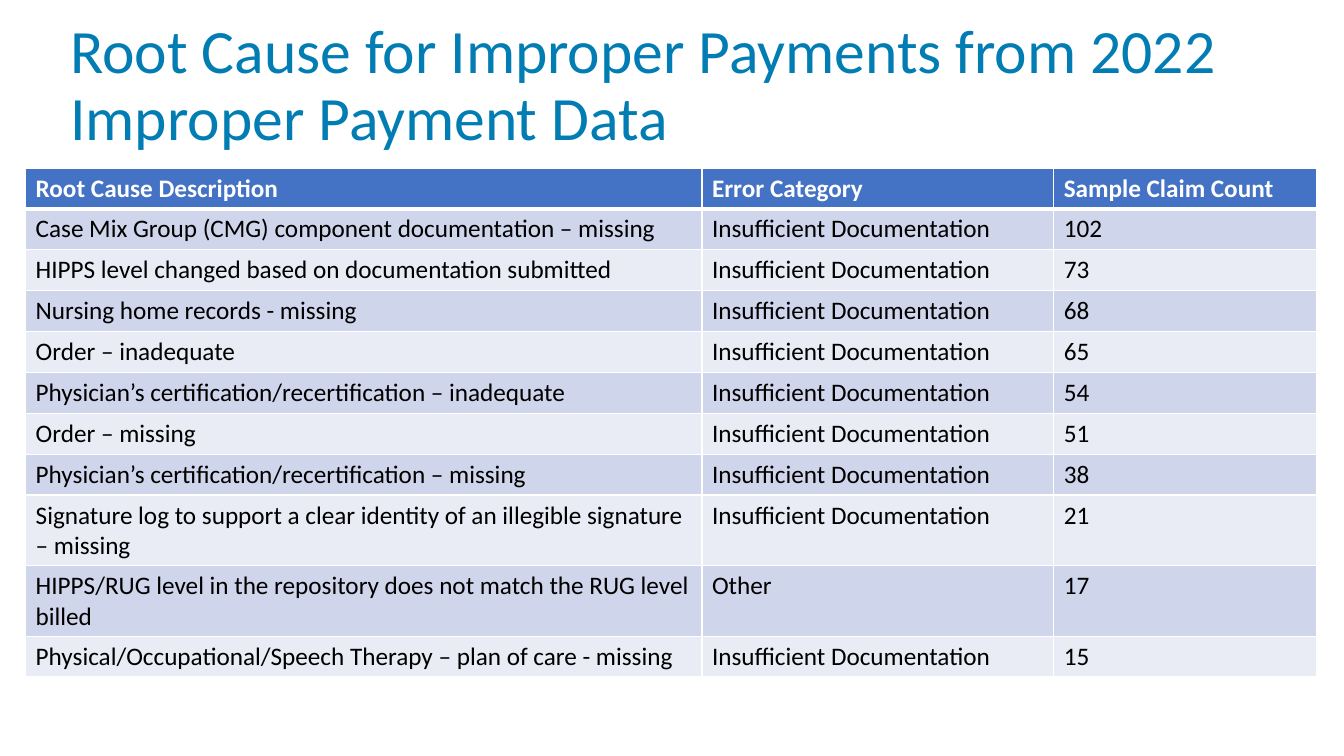
from dataclasses import dataclass

from lxml.etree import SubElement
from pptx import Presentation
from pptx.dml.color import RGBColor
from pptx.enum.text import MSO_ANCHOR
from pptx.oxml.ns import qn
from pptx.slide import Slide
from pptx.table import _Cell
from pptx.text.text import _Paragraph
from pptx.util import Pt


@dataclass(frozen=True)
class Theme:
    font: str = "Calibri"
    title_size: float = 44
    table_size: float = 18
    title: str = "017DB4"
    header_fill: str = "4472C4"
    header_text: str = "FFFFFF"
    body_text: str = "000000"
    bands: tuple[str, str] = ("CFD5EA", "E9EBF5")
    border: str = "FFFFFF"
    border_width: float = 1
    header_rule_width: float = 3


@dataclass(frozen=True)
class RootCause:
    description: str
    claims: int
    category: str = "Insufficient Documentation"


THEME = Theme()
TITLE = "Root Cause for Improper Payments from 2022 Improper Payment Data"
HEADINGS = ("Root Cause Description", "Error Category", "Sample Claim Count")
COLUMN_WIDTHS = (483.1, 251.3, 187.9)
ROW_HEIGHT = 29.2
ROOT_CAUSES = (
    RootCause("Case Mix Group (CMG) component documentation – missing", 102),
    RootCause("HIPPS level changed based on documentation submitted", 73),
    RootCause("Nursing home records - missing", 68),
    RootCause("Order – inadequate", 65),
    RootCause("Physician’s certification/recertification – inadequate", 54),
    RootCause("Order – missing", 51),
    RootCause("Physician’s certification/recertification – missing", 38),
    RootCause("Signature log to support a clear identity of an illegible signature – missing", 21),
    RootCause("HIPPS/RUG level in the repository does not match the RUG level billed", 17, "Other"),
    RootCause("Physical/Occupational/Speech Therapy – plan of care - missing", 15),
)


def add_span(para: _Paragraph, text: str, size: float, color: str, bold: bool = False) -> None:
    span = para.add_run()
    span.text = text
    span.font.name = THEME.font
    span.font.size = Pt(size)
    span.font.bold = bold
    span.font.color.rgb = RGBColor.from_string(color)


def add_title(page: Slide) -> None:
    box = page.shapes.add_textbox(Pt(43.2), Pt(13.7), Pt(897.8), Pt(97.2))
    frame = box.text_frame
    frame.word_wrap = True
    frame.vertical_anchor = MSO_ANCHOR.MIDDLE
    para = frame.paragraphs[0]
    para.line_spacing = 0.9
    add_span(para, TITLE, THEME.title_size, THEME.title)


def add_borders(cell: _Cell, top: float, bottom: float) -> None:
    """Draw the four cell edges; must run before the fill is set."""
    properties = cell._tc.get_or_add_tcPr()
    side = THEME.border_width
    for edge, width in (("lnL", side), ("lnR", side), ("lnT", top), ("lnB", bottom)):
        line = SubElement(properties, qn(f"a:{edge}"), w=str(Pt(width)))
        fill = SubElement(line, qn("a:solidFill"))
        SubElement(fill, qn("a:srgbClr"), val=THEME.border)


def fill_cell(cell: _Cell, text: str, row: int) -> None:
    is_header = row == 0
    thin, thick = THEME.border_width, THEME.header_rule_width
    add_borders(cell, thick if row == 1 else thin, thick if is_header else thin)
    background = THEME.header_fill if is_header else THEME.bands[(row - 1) % 2]
    cell.fill.solid()
    cell.fill.fore_color.rgb = RGBColor.from_string(background)
    color = THEME.header_text if is_header else THEME.body_text
    add_span(cell.text_frame.paragraphs[0], text, THEME.table_size, color, is_header)


def add_cause_table(page: Slide) -> None:
    rows = [HEADINGS] + [(c.description, c.category, str(c.claims)) for c in ROOT_CAUSES]
    frame = page.shapes.add_table(
        len(rows), len(HEADINGS), Pt(18.3), Pt(120),
        Pt(sum(COLUMN_WIDTHS)), Pt(ROW_HEIGHT * len(rows)),
    )
    table = frame.table
    for column, width in zip(table.columns, COLUMN_WIDTHS):
        column.width = Pt(width)
    for row, texts in enumerate(rows):
        table.rows[row].height = Pt(ROW_HEIGHT)
        for column, text in enumerate(texts):
            fill_cell(table.cell(row, column), text, row)


def main() -> None:
    deck = Presentation()
    deck.slide_width, deck.slide_height = Pt(960), Pt(540)
    page = deck.slides.add_slide(deck.slide_layouts[6])
    add_title(page)
    add_cause_table(page)
    deck.save("out.pptx")


if __name__ == "__main__":
    main()
